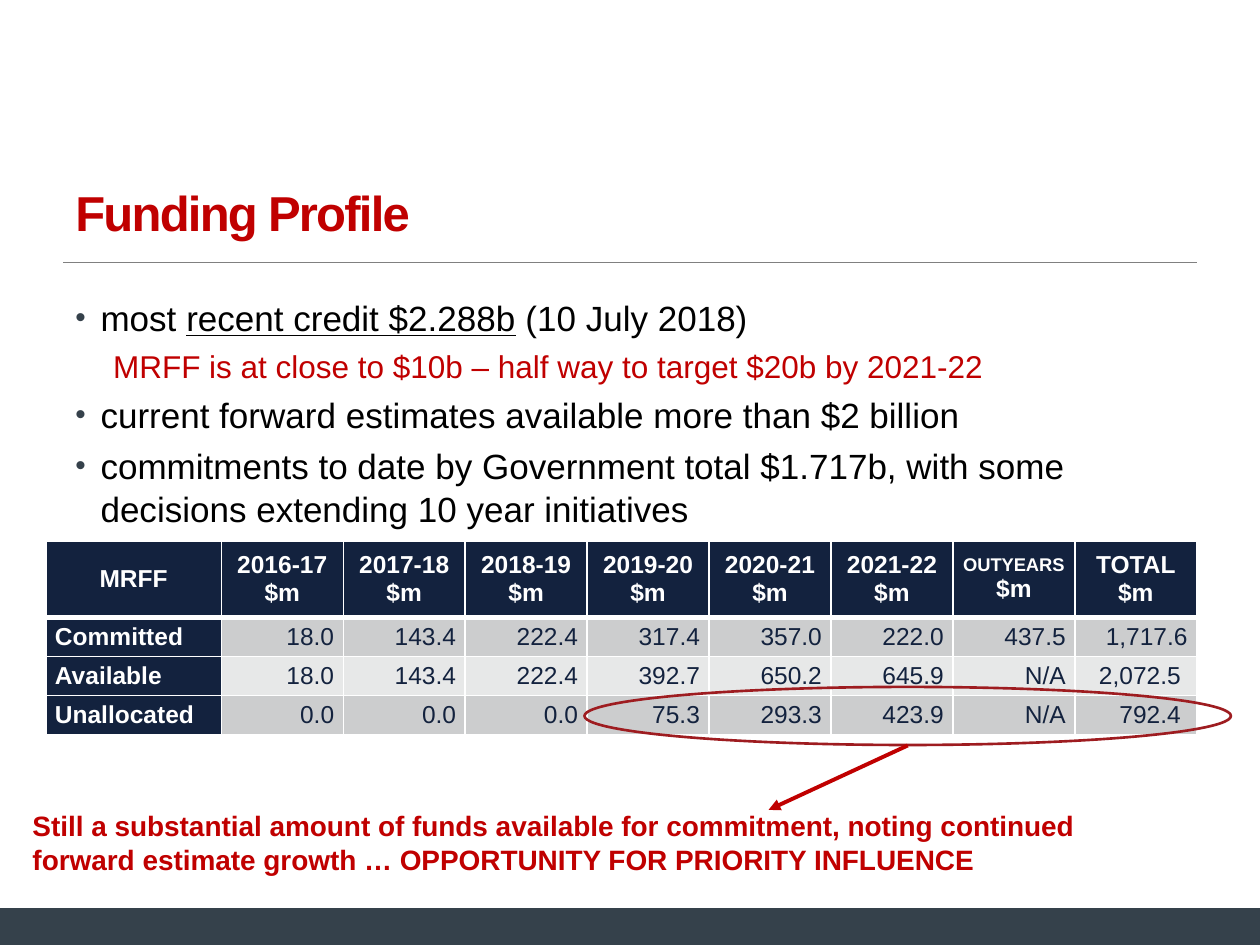
from lxml import etree
from pptx import Presentation
from pptx.dml.color import RGBColor
from pptx.enum.shapes import MSO_CONNECTOR, MSO_SHAPE
from pptx.enum.text import MSO_ANCHOR, PP_ALIGN
from pptx.oxml.ns import qn
from pptx.util import Pt

RECT, OVAL = MSO_SHAPE.RECTANGLE, MSO_SHAPE.OVAL
LINE = MSO_CONNECTOR.STRAIGHT
TOP, MIDDLE, BOTTOM = MSO_ANCHOR.TOP, MSO_ANCHOR.MIDDLE, MSO_ANCHOR.BOTTOM
LEFT, CENTER, RIGHT = PP_ALIGN.LEFT, PP_ALIGN.CENTER, PP_ALIGN.RIGHT

RED, NAVY, SLATE, WHITE, BLACK = "C00000", "13223E", "35414B", "FFFFFF", "000000"
BANDS = ["CCCDCE", "E7E8E8"]
YEARS = ["2016-17", "2017-18", "2018-19", "2019-20", "2020-21", "2021-22"]
ROWS = [
    ["Committed", "18.0", "143.4", "222.4", "317.4", "357.0", "222.0", "437.5", "1,717.6"],
    ["Available", "18.0", "143.4", "222.4", "392.7", "650.2", "645.9", "N/A", "2,072.5 "],
    ["Unallocated", "0.0", "0.0", "0.0", "75.3", "293.3", "423.9", "N/A", "792.4 "],
]
MAIN = {"size": Pt(20)}
POINTS = [
    (True, [("most ", {}), ("recent credit $2.288b", {"underline": True}),
            (" (10 July 2018)", {})]),
    (False, [("MRFF is at close to $10b – half way to target $20b by 2021-22", {})]),
    (True, [("current forward estimates available more than $2\u00a0billion", {})]),
    (True, [("commitments to date by Government total $1.717b, with some "
             "decisions extending 10 year initiatives", {})]),
]


def rgb(code):
    """Turn a hex string into a colour."""
    return RGBColor.from_string(code)


def assign(item, values):
    """Set every attribute named in a dict."""
    for name, value in values.items():
        setattr(item, name, value)


def add_run(para, text, color, style):
    """Add one styled run to a paragraph."""
    run = para.add_run()
    run.text = text
    assign(run.font, {"name": "Arial", **style})
    run.font.color.rgb = rgb(color)
    return run


def add_box(slide, left, top, width, height, anchor=TOP):
    """Add a wrapping text box and return its frame."""
    frame = slide.shapes.add_textbox(Pt(left), Pt(top), Pt(width), Pt(height)).text_frame
    assign(frame, {"word_wrap": True, "vertical_anchor": anchor})
    return frame


def add_bullet(para):
    """Give a paragraph a small slate bullet with a hanging indent."""
    props = para._p.get_or_add_pPr()
    props.set("marL", str(Pt(14.4)))
    props.set("indent", str(-Pt(14.4)))
    color = etree.SubElement(props, qn("a:buClr"))
    etree.SubElement(color, qn("a:srgbClr"), val=SLATE)
    etree.SubElement(props, qn("a:buSzPct"), val="85000")
    etree.SubElement(props, qn("a:buFont"), typeface="Arial")
    etree.SubElement(props, qn("a:buChar"), char="•")


def add_points(slide):
    """Add the bulleted body text."""
    frame = add_box(slide, 36, 165, 648, 140)
    for index, (main, parts) in enumerate(POINTS):
        para = frame.paragraphs[0] if index == 0 else frame.add_paragraph()
        if main:
            add_bullet(para)
        else:
            para._p.get_or_add_pPr().set("marL", str(Pt(21.6)))
        base, color = (MAIN, BLACK) if main else ({"size": Pt(18)}, RED)
        assign(para, {"line_spacing": 1.04, "space_before": Pt(4 if index else 0)})
        for text, style in parts:
            add_run(para, text, color, {**base, **style})


def add_shape(slide, kind, left, top, width, height, fill=None, line=None):
    """Add a flat preset shape."""
    shape = slide.shapes.add_shape(kind, Pt(left), Pt(top), Pt(width), Pt(height))
    shape.shadow.inherit = False
    if fill:
        shape.fill.solid()
        shape.fill.fore_color.rgb = rgb(fill)
    else:
        shape.fill.background()
    if line:
        shape.line.color.rgb = rgb(line)
        shape.line.width = Pt(1.5)
    else:
        shape.line.fill.background()


def add_line(slide, start, end, color, width, arrow=False):
    """Add a straight line, with an arrowhead if wanted."""
    line = slide.shapes.add_connector(LINE, *map(Pt, start + end))
    line.line.color.rgb = rgb(color)
    line.line.width = Pt(width)
    if arrow:
        etree.SubElement(line.line._get_or_add_ln(), qn("a:tailEnd"), type="triangle")
    etree.SubElement(line._element.spPr, qn("a:effectLst"))


def set_edges(cell, widths):
    """Draw white borders around a cell."""
    props = cell._tc.get_or_add_tcPr()
    for index, (side, width) in enumerate(zip("LRTB", widths)):
        edge = etree.Element(qn(f"a:ln{side}"), w=str(Pt(width)))
        fill = etree.SubElement(edge, qn("a:solidFill"))
        etree.SubElement(fill, qn("a:srgbClr"), val=WHITE)
        props.insert(index, edge)


def fill_cell(cell, lines, align, color, fill, bold, widths):
    """Write and format one table cell."""
    assign(cell, {"margin_left": Pt(5.2), "margin_right": Pt(5.2), "margin_top": 0,
                  "margin_bottom": 0, "vertical_anchor": MIDDLE})
    cell.fill.solid()
    cell.fill.fore_color.rgb = rgb(fill)
    set_edges(cell, widths)
    for index, text in enumerate(lines):
        para = cell.text_frame.paragraphs[0] if index == 0 else cell.text_frame.add_paragraph()
        para.alignment = align
        size = 10.5 if text == "OUTYEARS" else 14
        add_run(para, text, color, {"size": Pt(size), "bold": bold})


def add_funds(slide):
    """Add the funding table."""
    heads = [["MRFF"]] + [[name, "$m"] for name in YEARS + ["OUTYEARS", "TOTAL"]]
    table = slide.shapes.add_table(len(ROWS) + 1, len(heads), Pt(26.2), Pt(309),
                                   Pt(657.9), Pt(110.9)).table
    for index, column in enumerate(table.columns):
        column.width = Pt(69.7 if index else 100.3)
    for index, row in enumerate(table.rows):
        row.height = Pt(22.3 if index else 44)
    for col, lines in enumerate(heads):
        fill_cell(table.cell(0, col), lines, CENTER, WHITE, NAVY, True, (1, 1, 1, 3))
    for row, values in enumerate(ROWS, 1):
        widths = (1, 1, 3 if row == 1 else 1, 1)
        band = BANDS[(row - 1) % 2]
        for col, text in enumerate(values):
            look = (RIGHT, NAVY, band, False) if col else (LEFT, WHITE, NAVY, True)
            fill_cell(table.cell(row, col), [text], *look, widths)


def main():
    """Build and save the slide."""
    deck = Presentation()
    assign(deck, {"slide_width": Pt(720), "slide_height": Pt(540)})
    slide = deck.slides.add_slide(deck.slide_layouts[6])
    add_shape(slide, RECT, 0, 519, 720, 21, fill=SLATE)
    add_line(slide, (36, 150), (684, 150), "808080", 0.5)
    title = add_box(slide, 36, 63.4, 648, 77.8, BOTTOM)
    run = add_run(title.paragraphs[0], "Funding Profile", RED, {"size": Pt(28), "bold": True})
    run.font._element.set("spc", "-100")
    add_points(slide)
    add_funds(slide)
    add_shape(slide, OVAL, 334, 392.5, 369.4, 33.2, line="9E1C20")
    note = add_box(slide, 11.5, 458.6, 645, 46)
    add_run(note.paragraphs[0],
            "Still a substantial amount of funds available for commitment, noting continued "
            "forward estimate growth … OPPORTUNITY FOR PRIORITY INFLUENCE",
            RED, {"size": Pt(16), "bold": True})
    add_line(slide, (518.7, 426), (439.2, 462.8), RED, 2.25, arrow=True)
    deck.save("out.pptx")


if __name__ == "__main__":
    main()
